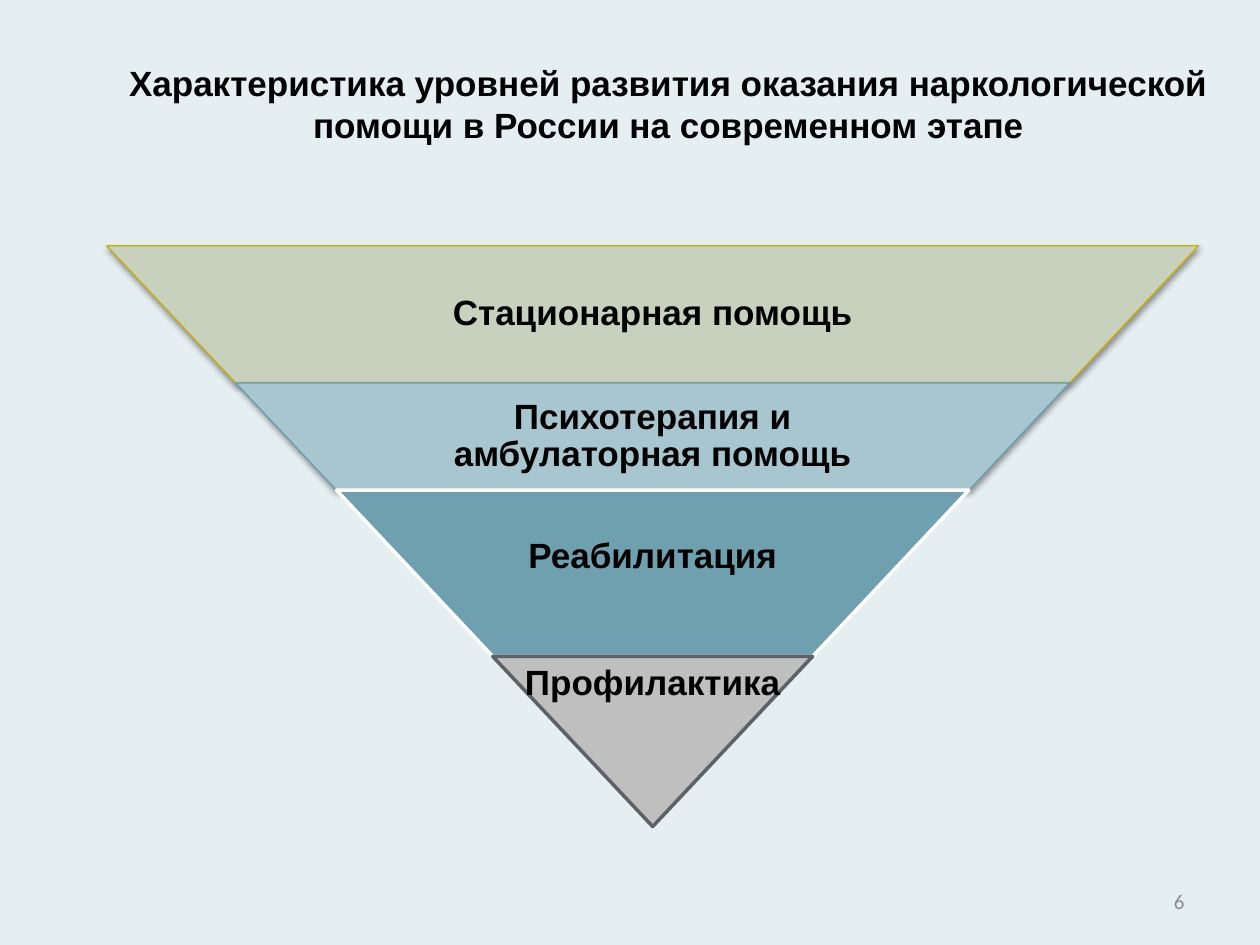
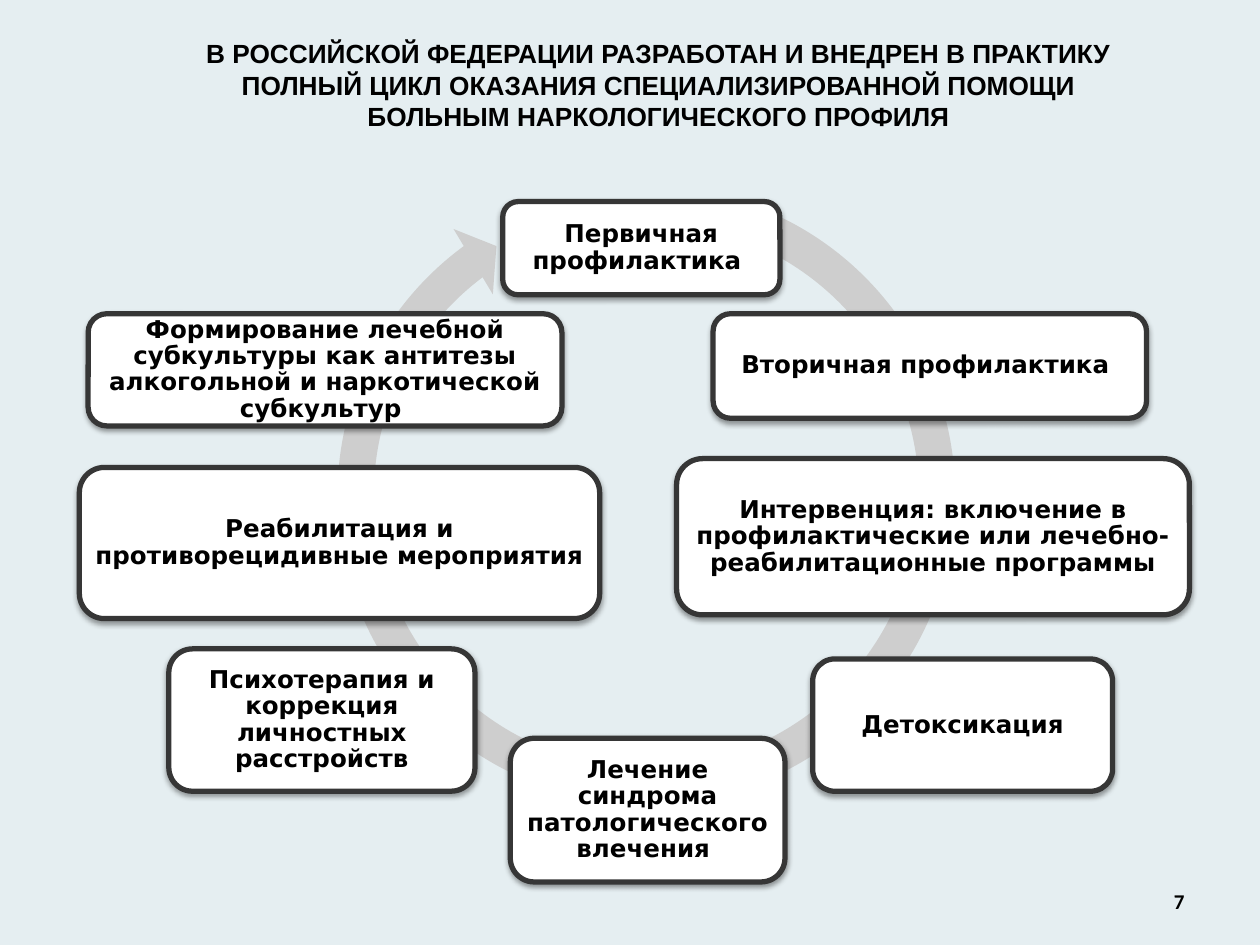
from lxml import etree
from pptx import Presentation
from pptx.dml.color import RGBColor
from pptx.enum import shapes, text
from pptx.oxml.ns import qn
from pptx.util import Inches, Pt

BACKGROUND = RGBColor(0xE5, 0xEE, 0xF1)
BLACK = RGBColor(0x00, 0x00, 0x00)
WHITE = RGBColor(0xFF, 0xFF, 0xFF)
GREY = RGBColor(0x8C, 0x8C, 0x8C)
SAGE = RGBColor(0xC8, 0xD0, 0xBE)
GOLD = RGBColor(0xCC, 0xAE, 0x05)
PALE_BLUE = RGBColor(0xA8, 0xC6, 0xD0)
BLUE_EDGE = RGBColor(0x6A, 0x9D, 0xAE)
TEAL = RGBColor(0x6E, 0xA0, 0xB0)
SILVER = RGBColor(0xBF, 0xBF, 0xBF)
SLATE = RGBColor(0x5D, 0x62, 0x68)
RING = RGBColor(0xCE, 0xCE, 0xCE)
CHARCOAL = RGBColor(0x36, 0x36, 0x36)

MIDDLE, TOP = text.MSO_ANCHOR.MIDDLE, text.MSO_ANCHOR.TOP
CENTER, RIGHT = text.PP_ALIGN.CENTER, text.PP_ALIGN.RIGHT

# label, height, fill, edge, edge width, shadow, text width share, anchor, bottom inset, line spacing
LEVELS = [
    ("Стационарная помощь", 1.09, SAGE, GOLD, 0.75, True, 0.65, MIDDLE, 0.03, 0.9),
    ("Психотерапия и амбулаторная помощь", 0.85, PALE_BLUE, BLUE_EDGE, 0.75, True, 0.65, MIDDLE, 0.03, 0.9),
    ("Реабилитация", 1.32, TEAL, WHITE, 2, False, 0.65, MIDDLE, 0.33, 1),
    ("Профилактика", 1.35, SILVER, SLATE, 2, False, 1, TOP, 0.03, 1),
]
PYRAMID_CENTER, PYRAMID_TOP, SLOPE = 5.18, 1.95, 0.94

STAGES = [
    ("Первичная профилактика ", (3.99, 1.6, 2.2, 0.74)),
    ("Вторичная профилактика ", (5.66, 2.49, 3.44, 0.83)),
    ("Интервенция: включение в профилактические или лечебно-реабилитационные программы",
     (5.37, 3.64, 4.07, 1.24)),
    ("Детоксикация", (6.45, 5.23, 2.38, 1.05)),
    ("Лечение синдрома патологического влечения ", (4.05, 5.86, 2.18, 1.14)),
    ("Психотерапия и коррекция личностных расстройств", (1.34, 5.15, 2.43, 1.13)),
    ("Реабилитация и противорецидивные мероприятия", (0.63, 3.71, 4.13, 1.2)),
    ("Формирование лечебной субкультуры как антитезы алкогольной и наркотической субкультур ",
     (0.7, 2.49, 3.76, 0.89)),
]


class Deck:
    """Holds the shared style and the slide being built."""

    def __init__(self):
        self.prs = Presentation()
        self.prs.slide_width, self.prs.slide_height = Inches(10), Inches(7.5)
        self.s = None

    def slide(self):
        self.s = self.prs.slides.add_slide(self.prs.slide_layouts[6])
        fill = self.s.background.fill
        fill.solid()
        fill.fore_color.rgb = BACKGROUND

    def set_text(self, sp, lines, size, font="Arial", color=BLACK, bold=True, align=CENTER,
                 anchor=TOP, insets=(0.1, 0.05, 0.1, 0.05), spacing=1):
        tf = sp.text_frame
        tf.word_wrap = True
        tf.vertical_anchor = anchor
        tf.margin_left, tf.margin_top, tf.margin_right, tf.margin_bottom = map(Inches, insets)
        for i, line in enumerate(lines):
            p = tf.paragraphs[0] if i == 0 else tf.add_paragraph()
            p.text = line
            p.alignment = align
            p.line_spacing = spacing
            p.font.name, p.font.size, p.font.bold = font, Pt(size), bold
            p.font.color.rgb = color

    def textbox(self, box, lines, size, **style):
        self.set_text(self.s.shapes.add_textbox(*map(Inches, box)), lines, size, **style)

    def title(self, box, lines, size):
        self.textbox(box, lines, size)

    def page_number(self, number, color, bold):
        self.textbox((7.17, 6.95, 2.33, 0.4), [number], 12, font="Calibri", color=color,
                     bold=bold, align=RIGHT, anchor=MIDDLE)

    def shape(self, kind, box, fill, edge=None, width=0, shadow=False):
        sp = self.s.shapes.add_shape(kind, *map(Inches, box))
        sp.fill.solid()
        sp.fill.fore_color.rgb = fill
        if edge is None:
            sp.line.fill.background()
        else:
            sp.line.color.rgb = edge
            sp.line.width = Pt(width)
        sp.shadow.inherit = False
        if shadow:
            self.cast_shadow(sp)
        return sp

    def cast_shadow(self, sp):
        effects = sp._element.spPr.find(qn("a:effectLst"))
        outer = etree.SubElement(effects, qn("a:outerShdw"), blurRad=str(Pt(3.1)),
                                 dist=str(Pt(1.6)), dir="5400000", rotWithShape="0")
        tint = etree.SubElement(outer, qn("a:srgbClr"), val=str(BLACK))
        etree.SubElement(tint, qn("a:alpha"), val="38000")

    def pyramid(self):
        top = PYRAMID_TOP
        apex = top + sum(level[1] for level in LEVELS)
        for label, height, fill, edge, width, shadow, share, anchor, bottom, spacing in LEVELS:
            span = 2 * SLOPE * (apex - top)
            sp = self.shape(shapes.MSO_SHAPE.TRAPEZOID,
                            (PYRAMID_CENTER - span / 2, top, span, height),
                            fill, edge, width, shadow)
            sp.adjustments[0] = SLOPE
            sp.rotation = 180
            room = span * share
            self.textbox((PYRAMID_CENTER - room / 2, top, room, height), [label], 20,
                         anchor=anchor, insets=(0.03, 0.03, 0.03, bottom), spacing=spacing)
            top += height

    def cycle(self):
        ring = self.shape(shapes.MSO_SHAPE.CIRCULAR_ARROW, (2.52, 1.32, 5.22, 5.22), RING)
        for i, value in enumerate((0.055, 3.31, 140.06, 172.48, 0.058)):
            ring.adjustments[i] = value
        for label, box in STAGES:
            sp = self.shape(shapes.MSO_SHAPE.ROUNDED_RECTANGLE, box, WHITE, CHARCOAL, 3, True)
            self.set_text(sp, [label], 14, font="DejaVu Sans", anchor=MIDDLE,
                          insets=(0.06,) * 4, spacing=0.9)


def main():
    deck = Deck()

    deck.slide()
    deck.pyramid()
    deck.title((0.83, 0.44, 8.95, 0.77),
               ["Характеристика уровней развития оказания наркологической "
                "помощи в России на современном этапе"], 20)
    deck.page_number("6", GREY, False)

    deck.slide()
    deck.title((0.51, 0.25, 9.49, 0.9),
               ["В РОССИЙСКОЙ ФЕДЕРАЦИИ РАЗРАБОТАН И ВНЕДРЕН В ПРАКТИКУ ",
                "ПОЛНЫЙ ЦИКЛ ОКАЗАНИЯ СПЕЦИАЛИЗИРОВАННОЙ ПОМОЩИ ",
                "БОЛЬНЫМ НАРКОЛОГИЧЕСКОГО ПРОФИЛЯ "], 15)
    deck.cycle()
    deck.page_number("7", BLACK, True)

    deck.prs.save("out.pptx")


if __name__ == "__main__":
    main()
